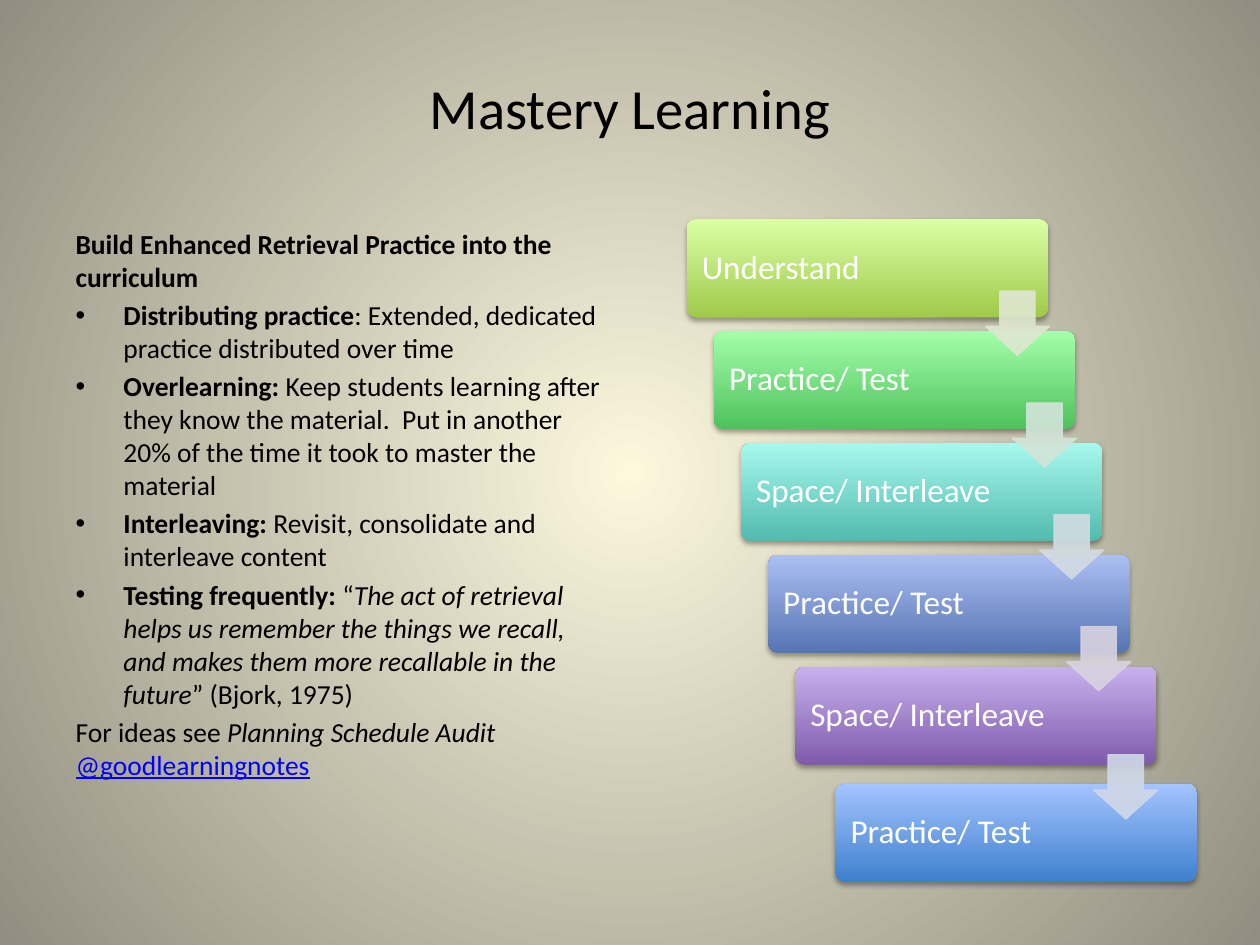
import pptx
import pptx.dml.color
import pptx.enum.shapes
import pptx.enum.text
import pptx.oxml
import pptx.oxml.ns
import pptx.util
from lxml import etree

Inches = pptx.util.Inches
Pt = pptx.util.Pt
RGBColor = pptx.dml.color.RGBColor
MSO_SHAPE = pptx.enum.shapes.MSO_SHAPE
MSO_ANCHOR = pptx.enum.text.MSO_ANCHOR
PP_ALIGN = pptx.enum.text.PP_ALIGN
qn = pptx.oxml.ns.qn

BLACK = RGBColor(0x00, 0x00, 0x00)
WHITE = RGBColor(0xFF, 0xFF, 0xFF)
LINK_BLUE = RGBColor(0x00, 0x00, 0xFF)
CREAM = RGBColor(0xFC, 0xF7, 0xDD)
STONE = RGBColor(0x91, 0x8E, 0x81)

# Label, bottom colour, top colour
STEPS = [
    ("Understand", RGBColor(0xA0, 0xCA, 0x4A), RGBColor(0xDA, 0xFF, 0xA5)),
    ("Practice/ Test", RGBColor(0x4E, 0xC2, 0x5B), RGBColor(0xA4, 0xFE, 0xAB)),
    ("Space/ Interleave", RGBColor(0x52, 0xBB, 0xAF), RGBColor(0xA8, 0xF8, 0xED)),
    ("Practice/ Test", RGBColor(0x56, 0x75, 0xB3), RGBColor(0xAC, 0xBF, 0xF3)),
    ("Space/ Interleave", RGBColor(0x7F, 0x5B, 0xAB), RGBColor(0xC8, 0xB0, 0xED)),
    ("Practice/ Test", RGBColor(0x3F, 0x80, 0xCE), RGBColor(0xA4, 0xC4, 0xFF)),
]
ARROW_COLOURS = [
    RGBColor(0xDE, 0xE7, 0xD1),
    RGBColor(0xD2, 0xE5, 0xD9),
    RGBColor(0xD2, 0xDC, 0xE2),
    RGBColor(0xD8, 0xD3, 0xE0),
    RGBColor(0xD0, 0xD8, 0xE8),
]

# Each paragraph: bulleted or not, then runs of (text, style)
ADVICE = [
    (False, [("Build Enhanced Retrieval Practice into the curriculum", "bold")]),
    (True, [("Distributing practice", "bold"),
            (": Extended, dedicated practice distributed over time", "plain")]),
    (True, [("Overlearning: ", "bold"),
            ("Keep students learning after they know the material.  Put in another "
             "20% of the time it took to master the material", "plain")]),
    (True, [("Interleaving: ", "bold"),
            ("Revisit, consolidate and interleave content", "plain")]),
    (True, [("Testing frequently:", "bold"), (" “", "plain"),
            ("The act of retrieval helps us remember the things we recall, "
             "and makes them more recallable in the future", "italic"),
            ("” (Bjork, 1975)", "plain")]),
    (False, [("For ideas see ", "plain"), ("Planning Schedule Audit ", "italic"),
             ("@goodlearningnotes", "link")]),
]


class MasterySlide:
    font_name = "Calibri"

    def __init__(self, presentation):
        self.slide = presentation.slides.add_slide(presentation.slide_layouts[1])

    def style(self, paragraph, size, colour):
        paragraph.font.name = self.font_name
        paragraph.font.size = Pt(size)
        paragraph.font.color.rgb = colour

    def place(self, shape, left, top, width, height):
        shape.left, shape.top = Inches(left), Inches(top)
        shape.width, shape.height = Inches(width), Inches(height)

    def gradient(self, fill, first, last):
        fill.gradient()
        for stop, colour in zip(fill.gradient_stops, (first, last)):
            stop.color.rgb = colour

    def background(self, centre, edge):
        self.gradient(self.slide.background.fill, centre, edge)
        linear = self.slide.element.xpath(".//p:bg//a:lin")[0]
        radial = etree.Element(qn("a:path"), {"path": "circle"})
        middle = {side: "50000" for side in "ltrb"}
        etree.SubElement(radial, qn("a:fillToRect"), middle)
        linear.getparent().replace(linear, radial)

    def title(self, text):
        heading = self.slide.shapes.title
        self.place(heading, 0.5, 0.5, 9, 1.25)
        frame = heading.text_frame
        frame.text = text
        frame.auto_size = pptx.enum.text.MSO_AUTO_SIZE.NONE
        frame.vertical_anchor = MSO_ANCHOR.MIDDLE
        frame.margin_bottom = Inches(0.6)
        frame.paragraphs[0].alignment = PP_ALIGN.CENTER
        self.style(frame.paragraphs[0], 32.4, BLACK)

    def body(self, paragraphs):
        advice = self.slide.placeholders[1]
        self.place(advice, 0.5, 1.75, 4.42, 3.81)
        frame = advice.text_frame
        frame.auto_size = pptx.enum.text.MSO_AUTO_SIZE.NONE
        for index, (bulleted, runs) in enumerate(paragraphs):
            paragraph = frame.add_paragraph() if index else frame.paragraphs[0]
            self.style(paragraph, 15.7, BLACK)
            paragraph.space_before = Pt(3 if index else 0)
            self.bullet(paragraph, bulleted)
            for text, kind in runs:
                run = paragraph.add_run()
                run.text = text
                run.font.bold = kind == "bold"
                run.font.italic = kind == "italic"
                if kind == "link":
                    run.font.underline = True
                    run.font.color.rgb = LINK_BLUE

    def bullet(self, paragraph, bulleted):
        properties = paragraph._p.get_or_add_pPr()
        indent = Inches(0.38) if bulleted else 0
        properties.set("marL", str(indent))
        properties.set("indent", str(-indent))
        mark = pptx.oxml.parse_xml(
            '<a:%s xmlns:a="http://schemas.openxmlformats.org/drawingml/2006/main"/>'
            % ("buChar" if bulleted else "buNone"))
        if bulleted:
            mark.set("char", "•")
        properties.insert_element_before(mark, "a:tabLst", "a:defRPr", "a:extLst")

    def card(self, left, top, text, bottom_colour, top_colour):
        card = self.slide.shapes.add_shape(
            MSO_SHAPE.ROUNDED_RECTANGLE,
            Inches(left), Inches(top), Inches(2.87), Inches(0.78))
        card.adjustments[0] = 0.1
        self.gradient(card.fill, bottom_colour, top_colour)
        card.fill.gradient_angle = 90
        card.line.fill.background()
        self.soft_shadow(card)
        frame = card.text_frame
        frame.word_wrap = True
        frame.vertical_anchor = MSO_ANCHOR.MIDDLE
        frame.margin_left = frame.margin_right = Inches(0.1)
        frame.text = text
        frame.paragraphs[0].alignment = PP_ALIGN.LEFT
        frame.paragraphs[0].line_spacing = 0.9
        self.style(frame.paragraphs[0], 19, WHITE)

    def soft_shadow(self, shape):
        shape.shadow.inherit = False
        effects = shape._element.spPr.find(qn("a:effectLst"))
        shadow = etree.SubElement(effects, qn("a:outerShdw"), {
            "blurRad": str(Pt(3.1)), "dist": str(Pt(1.8)),
            "dir": "5400000", "rotWithShape": "0"})
        black = etree.SubElement(shadow, qn("a:srgbClr"), {"val": str(BLACK)})
        etree.SubElement(black, qn("a:alpha"), {"val": "35000"})

    def arrow(self, left, top, colour):
        arrow = self.slide.shapes.add_shape(
            MSO_SHAPE.DOWN_ARROW,
            Inches(left), Inches(top), Inches(0.51), Inches(0.51))
        arrow.adjustments[0] = 0.55
        arrow.adjustments[1] = 0.45
        arrow.fill.solid()
        arrow.fill.fore_color.rgb = colour
        arrow.line.color.rgb = colour
        arrow.line.width = Pt(0.75)
        arrow.shadow.inherit = False
        for tint in arrow._element.spPr.iter(qn("a:srgbClr")):
            etree.SubElement(tint, qn("a:alpha"), {"val": "90000"})


def main():
    presentation = pptx.Presentation()
    presentation.slide_width = Inches(10)
    presentation.slide_height = Inches(7.5)

    page = MasterySlide(presentation)
    page.background(CREAM, STONE)
    page.title("Mastery Learning")
    page.body(ADVICE)

    # The last step stands a little apart from the even staircase.
    spots = [(5.45 + 0.215 * i, 1.74 + 0.8875 * i) for i in range(5)] + [(6.63, 6.22)]
    for (left, top), step in zip(spots, STEPS):
        page.card(left, top, *step)
    arrow_drops = [0.57] * 4 + [0.7]
    for (left, top), drop, colour in zip(spots, arrow_drops, ARROW_COLOURS):
        page.arrow(left + 2.37, top + drop, colour)

    presentation.save("out.pptx")


if __name__ == "__main__":
    main()
